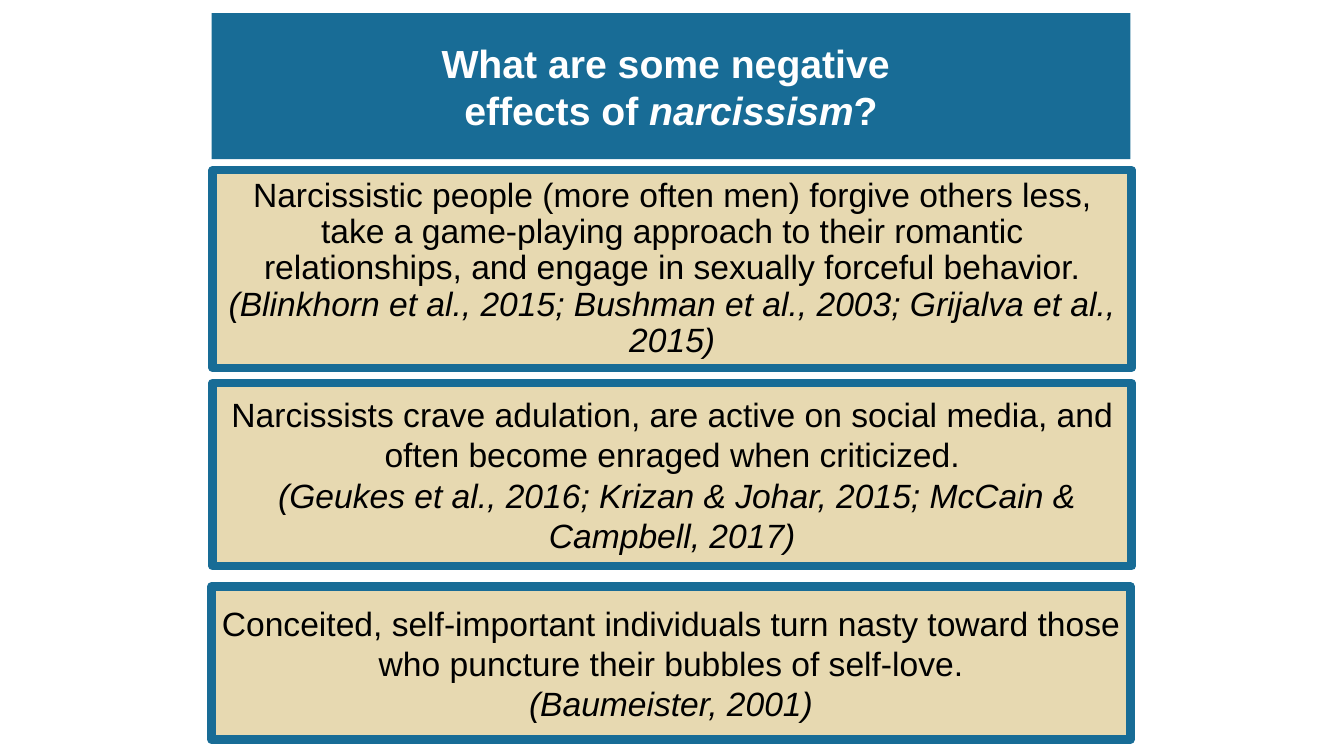
import pptx
import pptx.util
import pptx.dml.color
import pptx.enum.shapes
import pptx.enum.text
from pptx.util import Cm, Pt

BLUE, SAND, WHITE, BLACK = "186C96", "E7D9B1", "FFFFFF", "000000"
FONT = "Arial"
WIDTH = 23.16

# Content: each paragraph is a list of (text, italic) runs
TITLE = [[("What are some negative \veffects of ", False), ("narcissism", True), ("?", False)]]
TITLE_PLACE = (5.33, 0.33, 3.68)  # left, top, height in cm

# left, top, height in cm, line spacing, paragraphs
EFFECTS = [
    (5.36, 4.29, 4.98, 0.9, [
        [("Narcissistic people (more often men) forgive others less, take a game-playing "
          "approach to their romantic relationships, and engage in sexually forceful behavior. ", False),
         ("(Blinkhorn et al., 2015; Bushman et al., 2003; Grijalva et al., 2015)", True)]]),
    (5.36, 9.65, 4.62, 1.0, [
        [("Narcissists crave adulation, are active on social media, and often become "
          "enraged when criticized.", False)],
        [(" (Geukes et al., 2016; Krizan & Johar, 2015; McCain & Campbell, 2017)", True)]]),
    (5.33, 14.78, 3.86, 1.0, [
        [("Conceited, self-important individuals turn nasty toward those who puncture "
          "their bubbles of self-love.", False)],
        [("(Baumeister, 2001)", True)]]),
]


def color(value):
    return pptx.dml.color.RGBColor.from_string(value)


def paint(box, fill):
    box.fill.solid()
    box.fill.fore_color.rgb = color(fill)


def write(box, paragraphs, size, ink, bold=False, spacing=1.0):
    frame = box.text_frame
    frame.word_wrap = True
    frame.auto_size = pptx.enum.text.MSO_AUTO_SIZE.NONE
    frame.vertical_anchor = pptx.enum.text.MSO_ANCHOR.MIDDLE
    for number, runs in enumerate(paragraphs):
        para = frame.add_paragraph() if number else frame.paragraphs[0]
        para.alignment = pptx.enum.text.PP_ALIGN.CENTER
        para.line_spacing = spacing
        for text, italic in runs:
            for part, line in enumerate(text.split("\v")):
                if part:
                    para.add_line_break()
                span = para.add_run()
                span.text = line
                span.font.name = FONT
                span.font.size = Pt(size)
                span.font.bold = bold
                span.font.italic = italic
                span.font.color.rgb = color(ink)


deck = pptx.Presentation()
deck.slide_width, deck.slide_height = Cm(33.87), Cm(19.05)
page = deck.slides.add_slide(deck.slide_layouts[5])

# Title band
title = page.shapes.title
left, top, height = TITLE_PLACE
title.left, title.top, title.width, title.height = Cm(left), Cm(top), Cm(WIDTH), Cm(height)
paint(title, BLUE)
write(title, TITLE, 28, WHITE, bold=True)

# Framed effects
for left, top, height, spacing, paragraphs in EFFECTS:
    box = page.shapes.add_shape(pptx.enum.shapes.MSO_SHAPE.RECTANGLE,
                                Cm(left), Cm(top), Cm(WIDTH), Cm(height))
    box.shadow.inherit = False
    paint(box, SAND)
    box.line.color.rgb = color(BLUE)
    box.line.width = Pt(6)
    write(box, paragraphs, 24, BLACK, spacing=spacing)

deck.save("out.pptx")
